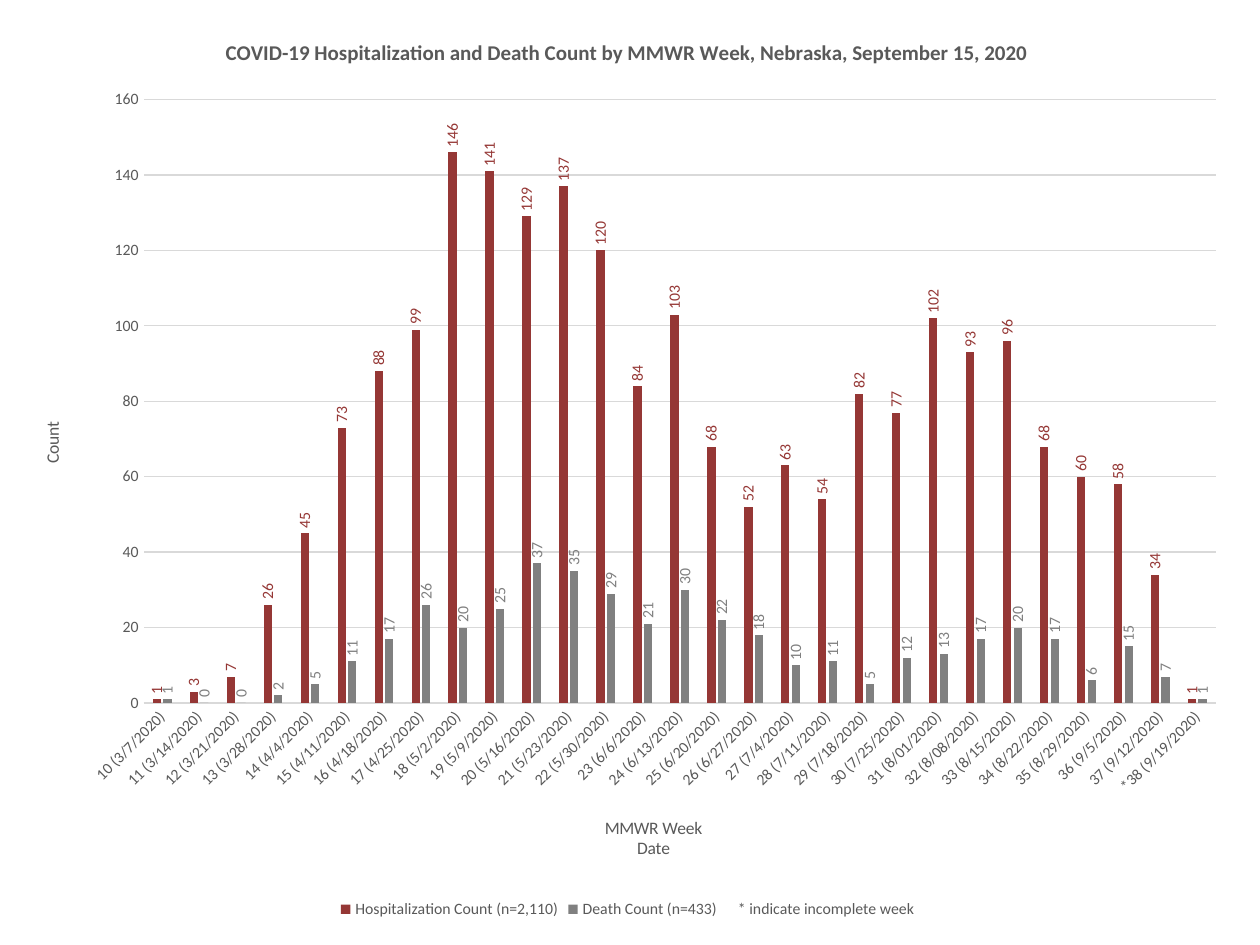
import pptx
import pptx.chart.data
import pptx.dml.color
import pptx.enum.chart
import pptx.oxml
import pptx.oxml.ns
import pptx.util
from pptx.util import Inches, Pt

COLORS = {"hospital": "953735", "death": "808080", "text": "595959", "grid": "D9D9D9"}
CHART_WIDTH, CHART_HEIGHT = 9.72, 7.26
TITLE = "COVID-19 Hospitalization and Death Count by MMWR Week, Nebraska, September 15, 2020"
HOSPITAL_NAME = "Hospitalization Count (n=2,110)"
DEATH_NAME = "Death Count (n=433)      * indicate incomplete week"
# MMWR week and date, hospitalizations, deaths
WEEKS = [
    ("10 (3/7/2020)", 1, 1),
    ("11 (3/14/2020)", 3, 0),
    ("12 (3/21/2020)", 7, 0),
    ("13 (3/28/2020)", 26, 2),
    ("14 (4/4/2020)", 45, 5),
    ("15 (4/11/2020)", 73, 11),
    ("16 (4/18/2020)", 88, 17),
    ("17 (4/25/2020)", 99, 26),
    ("18 (5/2/2020)", 146, 20),
    ("19 (5/9/2020)", 141, 25),
    ("20 (5/16/2020)", 129, 37),
    ("21 (5/23/2020)", 137, 35),
    ("22 (5/30/2020)", 120, 29),
    ("23 (6/6/2020)", 84, 21),
    ("24 (6/13/2020)", 103, 30),
    ("25 (6/20/2020)", 68, 22),
    ("26 (6/27/2020)", 52, 18),
    ("27 (7/4/2020)", 63, 10),
    ("28 (7/11/2020)", 54, 11),
    ("29 (7/18/2020)", 82, 5),
    ("30 (7/25/2020)", 77, 12),
    ("31 (8/01/2020)", 102, 13),
    ("32 (8/08/2020)", 93, 17),
    ("33 (8/15/2020)", 96, 20),
    ("34 (8/22/2020)", 68, 17),
    ("35 (8/29/2020)", 60, 6),
    ("36 (9/5/2020)", 58, 15),
    ("37 (9/12/2020)", 34, 7),
    ("*38 (9/19/2020)", 1, 1),
]


def rgb(name):
    return pptx.dml.color.RGBColor.from_string(COLORS[name])


def style_font(font, size, color="text", bold=False):
    font.name = "Calibri"
    font.size = Pt(size)
    font.bold = bold
    font.color.rgb = rgb(color)


def place(element, index, inner=False, **inches):
    """Set a manual layout, in inches within the chart, as child number index."""
    for old in element.findall(pptx.oxml.ns.qn("c:layout")):
        element.remove(old)
    target = '<c:layoutTarget val="inner"/>' if inner else ""
    modes = "".join(f'<c:{k}Mode val="edge"/>' for k in inches if k in "xy")
    values = "".join(
        f'<c:{k} val="{v / (CHART_WIDTH if k in "xw" else CHART_HEIGHT)}"/>'
        for k, v in inches.items())
    element.insert(index, pptx.oxml.parse_xml(
        f'<c:layout {pptx.oxml.ns.nsdecls("c")}><c:manualLayout>'
        f"{target}{modes}{values}</c:manualLayout></c:layout>"))


def write_title(owner, text, size, x, y, bold=False):
    """Give a chart or an axis its title."""
    title = owner.chart_title if hasattr(owner, "chart_title") else owner.axis_title
    title.text_frame.text = text
    for paragraph in title.text_frame.paragraphs:
        style_font(paragraph.font, size, bold=bold)
    place(title._element, 1, x=x, y=y)
    return title


def rotate(bodies, degrees):
    for body in bodies:
        body.set("rot", str(degrees * 60000))
        body.set("vert", "horz")


prs = pptx.Presentation()
prs.slide_width, prs.slide_height = Inches(10), Inches(7.5)
slide = prs.slides.add_slide(prs.slide_layouts[6])

weekly = pptx.chart.data.CategoryChartData(number_format="#,##0")
labels, hospitalizations, deaths = zip(*WEEKS)
weekly.categories = labels
weekly.add_series(HOSPITAL_NAME, hospitalizations)
weekly.add_series(DEATH_NAME, deaths)
chart = slide.shapes.add_chart(
    pptx.enum.chart.XL_CHART_TYPE.COLUMN_CLUSTERED, Inches(0.12), Inches(0.07),
    Inches(CHART_WIDTH), Inches(CHART_HEIGHT), weekly).chart
chart.font.name, chart.font.size = "Calibri", Pt(10)

chart.has_title = True
write_title(chart, TITLE, 12, 1.64, 0.2, bold=True)
chart.has_legend = True
chart.legend.position = pptx.enum.chart.XL_LEGEND_POSITION.BOTTOM
chart.legend.include_in_layout = False
style_font(chart.legend.font, 9)

bars = chart.plots[0]
bars.gap_width, bars.overlap, bars.vary_by_categories = 219, -27, False
for series, color in zip(bars.series, ("hospital", "death")):
    series.format.fill.solid()
    series.format.fill.fore_color.rgb = rgb(color)
    series.invert_if_negative = False
    counts = series.data_labels
    counts.show_value = True
    counts.position = pptx.enum.chart.XL_LABEL_POSITION.OUTSIDE_END
    counts.number_format, counts.number_format_is_linked = "#,##0", False
    style_font(counts.font, 9, color)
    rotate(counts._element.xpath("./c:txPr/a:bodyPr"), -90)

week_axis, count_axis = chart.category_axis, chart.value_axis
for axis in (week_axis, count_axis):
    axis.major_tick_mark = axis.minor_tick_mark = pptx.enum.chart.XL_TICK_MARK.NONE
    style_font(axis.tick_labels.font, 9)
week_axis.has_major_gridlines = False
rotate(week_axis._element.xpath("./c:txPr/a:bodyPr"), -45)
count_axis.minimum_scale, count_axis.maximum_scale, count_axis.major_unit = 0, 160, 20
count_axis.tick_labels.number_format = "#,##0"
count_axis.tick_labels.number_format_is_linked = False
count_axis.format.line.fill.background()
for line in (week_axis.format.line, count_axis.major_gridlines.format.line):
    line.color.rgb = rgb("grid")
    line.width = Pt(0.75)
write_title(week_axis, "MMWR Week\nDate", 10, 4.65, 6.38)
count_title = write_title(count_axis, "Count", 10, 0.18, 3.25)
rotate(count_title._element.xpath(".//a:bodyPr"), -90)

place(chart._chartSpace.chart.plotArea, 0, inner=True, x=1.02, y=0.72, w=8.51, h=4.79)

prs.save("out.pptx")
